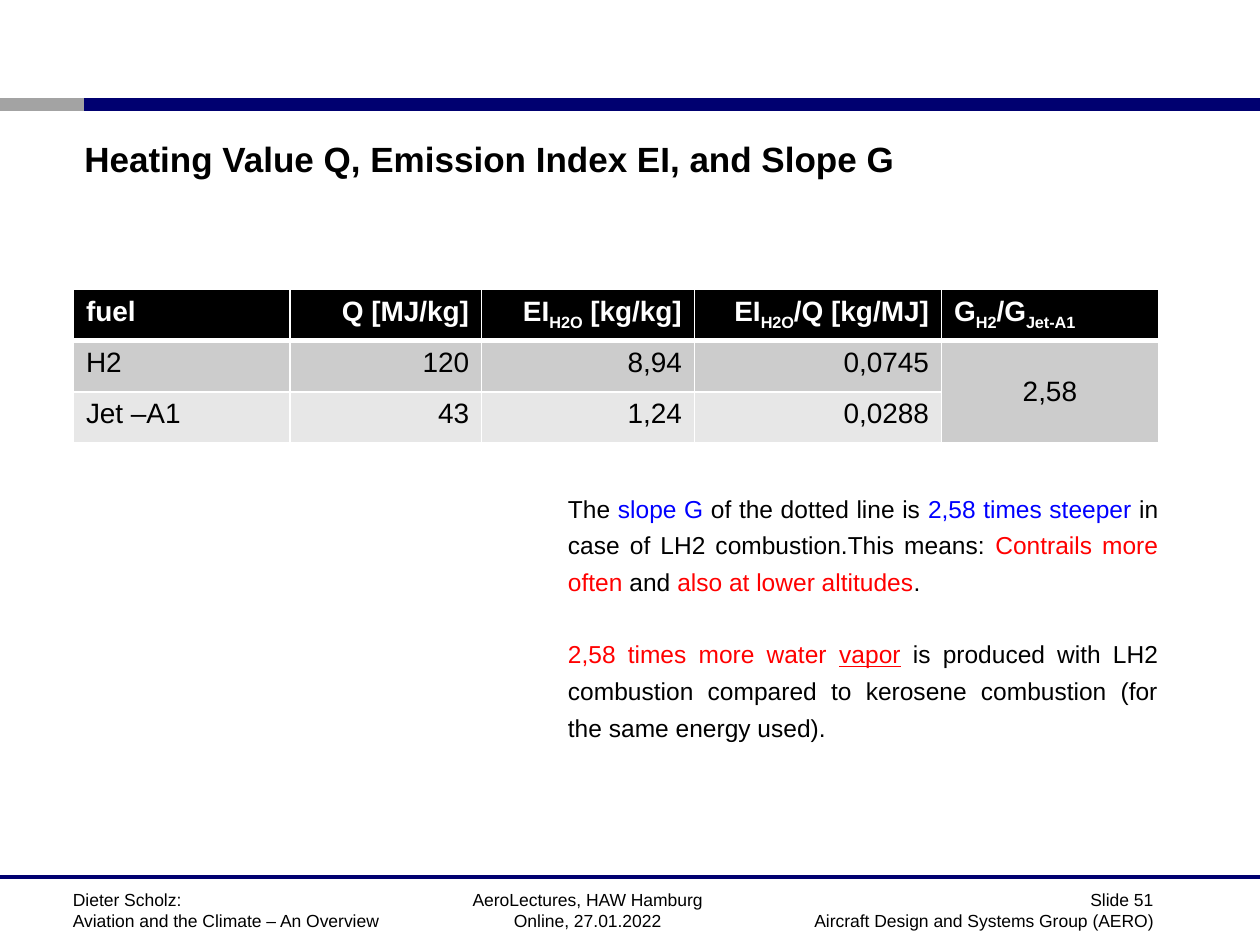
from dataclasses import dataclass

from lxml import etree
from pptx import Presentation
from pptx.dml.color import RGBColor
from pptx.enum.shapes import MSO_CONNECTOR
from pptx.enum.text import MSO_ANCHOR, PP_ALIGN
from pptx.oxml.ns import qn
from pptx.util import Cm, Pt

LEFT, CENTER, RIGHT, JUSTIFY = PP_ALIGN.LEFT, PP_ALIGN.CENTER, PP_ALIGN.RIGHT, PP_ALIGN.JUSTIFY
TOP, MIDDLE = MSO_ANCHOR.TOP, MSO_ANCHOR.MIDDLE
STRAIGHT = MSO_CONNECTOR.STRAIGHT


@dataclass(frozen=True)
class Theme:
    font: str = "Arial"
    black: str = "000000"
    white: str = "FFFFFF"
    navy: str = "000070"
    grey: str = "A3A3A3"
    blue: str = "0000FF"
    red: str = "FF0000"
    bands: tuple = ("CCCCCC", "E7E7E7")
    title_size: float = 20
    table_size: float = 16
    body_size: float = 14
    footer_size: float = 10


THEME = Theme()
BLUE = {"color": THEME.blue}
RED = {"color": THEME.red}
RED_UNDERLINED = {"color": THEME.red, "underline": True}
SUB = {"baseline": -25000}

TITLE = [[("Heating Value Q, Emission Index EI, and Slope G", {"bold": True})]]

HEADER = [
    [("fuel", {})],
    [("Q [MJ/kg]", {})],
    [("EI", {}), ("H2O", SUB), (" [kg/kg]", {})],
    [("EI", {}), ("H2O", SUB), ("/Q [kg/MJ]", {})],
    [("G", {}), ("H2", SUB), ("/G", {}), ("Jet-A1", SUB)],
]
FUELS = [
    ("H2", "120", "8,94", "0,0745"),
    ("Jet –A1", "43", "1,24", "0,0288"),
]
SLOPE_RATIO = "2,58"
COLUMN_WIDTHS = [4.37, 3.86, 4.29, 4.98, 4.37]
COLUMN_ALIGNS = [LEFT, RIGHT, RIGHT, RIGHT, LEFT]
ROW_HEIGHT = 1.03

BODY = [
    [
        ("The ", {}),
        ("slope G", BLUE),
        (" of the dotted line is ", {}),
        ("2,58 times steeper ", BLUE),
        ("in case of LH2 combustion.This means: ", {}),
        ("Contrails more often", RED),
        (" and ", {}),
        ("also at lower altitudes", RED),
        (".", {}),
    ],
    [
        ("2,58 times more water ", RED),
        ("vapor", RED_UNDERLINED),
        (" ", RED),
        ("is produced with LH2 combustion compared to kerosene combustion "
         "(for the same energy used).", {}),
    ],
]

FOOTERS = [
    (1.22, 6.88, LEFT, ("Dieter Scholz:", "Aviation and the Climate – An Overview")),
    (7.82, 8.05, CENTER, ("AeroLectures, HAW Hamburg", "Online, 27.01.2022")),
    (15.7, 7.8, RIGHT, ("Slide 51", "Aircraft Design and Systems Group (AERO)")),
]

RULES = [
    (0, 1.78, 2.11, THEME.grey, 7.09),
    (1.7, 25.4, 2.11, THEME.navy, 7.09),
    (0, 25.4, 17.68, THEME.navy, 2),
]


def write_spans(para, spans, size, color=THEME.black, bold=False):
    for text, style in spans:
        span = para.add_run()
        span.text = text
        span.font.name = THEME.font
        span.font.size = Pt(size)
        span.font.bold = style.get("bold", bold)
        span.font.color.rgb = RGBColor.from_string(style.get("color", color))
        if "underline" in style:
            span.font.underline = True
        if "baseline" in style:
            span._r.get_or_add_rPr().set("baseline", str(style["baseline"]))


def add_text(page, place, paragraphs, size, align=LEFT, anchor=TOP, line_spacing=None, gap=0):
    frame = page.shapes.add_textbox(*map(Cm, place)).text_frame
    frame.word_wrap = True
    frame.vertical_anchor = anchor
    for index, spans in enumerate(paragraphs):
        para = frame.add_paragraph() if index else frame.paragraphs[0]
        para.alignment = align
        if line_spacing:
            para.line_spacing = line_spacing
        if index and gap:
            para.space_before = Pt(gap)
        write_spans(para, spans, size)


def add_rule(page, start, end, height, color, weight):
    rule = page.shapes.add_connector(STRAIGHT, Cm(start), Cm(height), Cm(end), Cm(height))
    rule.line.color.rgb = RGBColor.from_string(color)
    rule.line.width = Pt(weight)
    etree.SubElement(rule._element.spPr, qn("a:effectLst"))


def style_cell(cell, fill, top_weight, bottom_weight):
    properties = cell._tc.get_or_add_tcPr()
    for side, weight in (("L", 1), ("R", 1), ("T", top_weight), ("B", bottom_weight)):
        border = etree.SubElement(properties, qn(f"a:ln{side}"), w=str(Pt(weight)))
        paint = etree.SubElement(border, qn("a:solidFill"))
        etree.SubElement(paint, qn("a:srgbClr"), val=THEME.white)
    cell.fill.solid()
    cell.fill.fore_color.rgb = RGBColor.from_string(fill)


def add_fuel_table(page):
    row_count = len(FUELS) + 1
    last = len(COLUMN_WIDTHS) - 1
    table = page.shapes.add_table(
        row_count, len(COLUMN_WIDTHS), Cm(1.48), Cm(5.84),
        Cm(sum(COLUMN_WIDTHS)), Cm(ROW_HEIGHT * row_count),
    ).table
    for column, width in zip(table.columns, COLUMN_WIDTHS):
        column.width = Cm(width)
    for row in table.rows:
        row.height = Cm(ROW_HEIGHT)

    for index, (spans, align) in enumerate(zip(HEADER, COLUMN_ALIGNS)):
        cell = table.cell(0, index)
        style_cell(cell, THEME.black, 1, 3)
        para = cell.text_frame.paragraphs[0]
        para.alignment = align
        write_spans(para, spans, THEME.table_size, THEME.white, bold=True)

    table.cell(1, last).merge(table.cell(row_count - 1, last))
    for row, (values, band) in enumerate(zip(FUELS, THEME.bands), start=1):
        top_weight = 3 if row == 1 else 1
        for index, value in enumerate(values):
            cell = table.cell(row, index)
            style_cell(cell, band, top_weight, 1)
            para = cell.text_frame.paragraphs[0]
            para.alignment = COLUMN_ALIGNS[index]
            write_spans(para, [(value, {})], THEME.table_size)
        style_cell(table.cell(row, last), THEME.bands[0], top_weight, 1)

    ratio = table.cell(1, last)
    ratio.vertical_anchor = MIDDLE
    para = ratio.text_frame.paragraphs[0]
    para.alignment = CENTER
    write_spans(para, [(SLOPE_RATIO, {})], THEME.table_size)


def main():
    deck = Presentation()
    deck.slide_width, deck.slide_height = Cm(25.4), Cm(19.05)
    page = deck.slides.add_slide(deck.slide_layouts[6])
    for rule in RULES:
        add_rule(page, *rule)
    for left, width, align, lines in FOOTERS:
        paragraphs = [[(line, {})] for line in lines]
        add_text(page, (left, 17.8, width, 1.2), paragraphs, THEME.footer_size, align)
    add_text(page, (1.45, 2.57, 22.83, 1.24), TITLE, THEME.title_size, anchor=MIDDLE)
    add_fuel_table(page)
    add_text(page, (11.2, 9.68, 12.4, 5.28), BODY, THEME.body_size, JUSTIFY,
             line_spacing=1.25, gap=20)
    deck.save("out.pptx")


if __name__ == "__main__":
    main()
